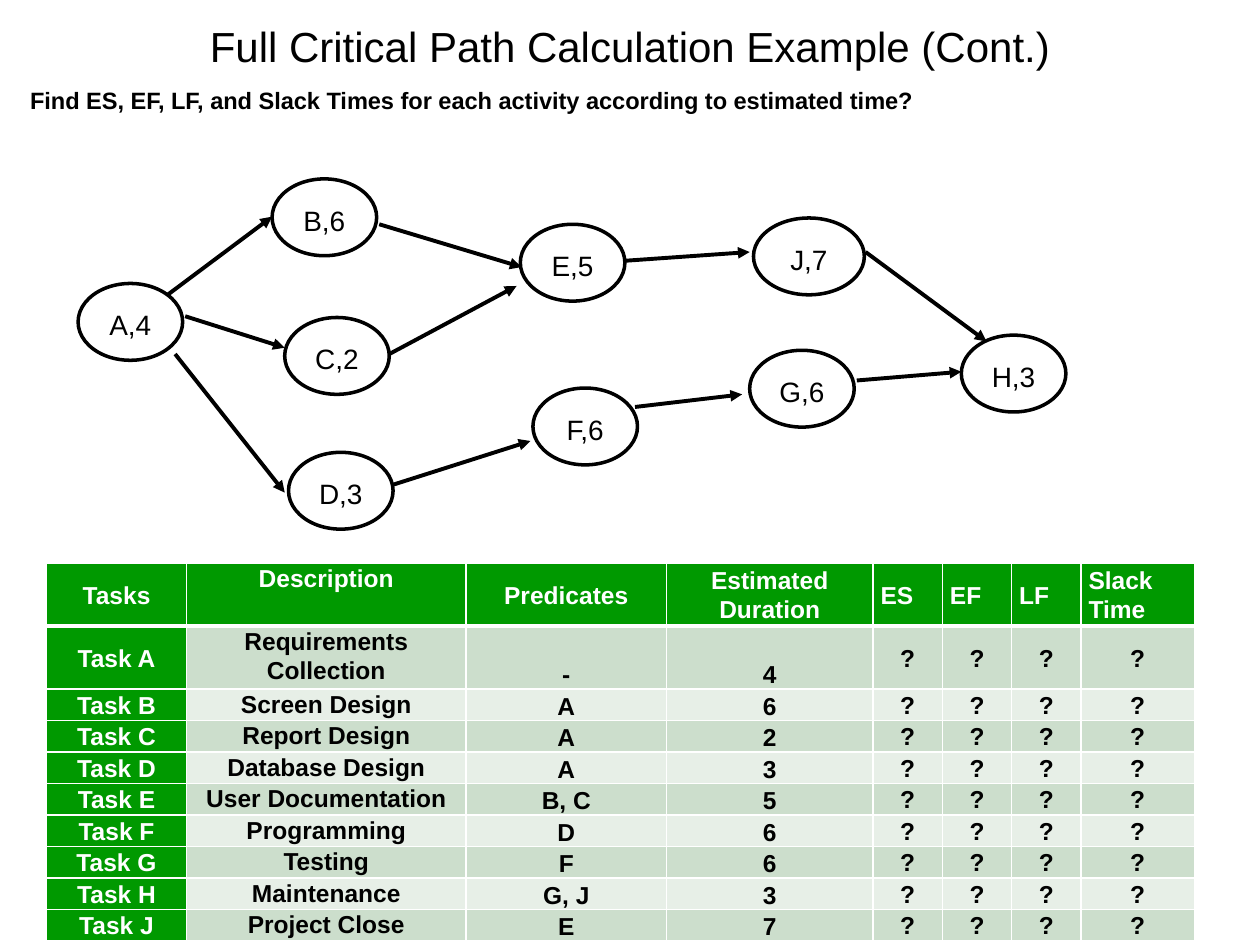
from dataclasses import dataclass

from lxml import etree
from pptx import Presentation
from pptx.dml.color import RGBColor
from pptx.enum.shapes import MSO_CONNECTOR, MSO_SHAPE
from pptx.enum.text import MSO_ANCHOR as ANCHOR, PP_ALIGN as ALIGN
from pptx.oxml.ns import qn
from pptx.util import Inches, Pt

BLACK = RGBColor(0x00, 0x00, 0x00)
WHITE = RGBColor(0xFF, 0xFF, 0xFF)
GREEN = RGBColor(0x00, 0x99, 0x00)
BANDS = (RGBColor(0xCC, 0xDE, 0xCC), RGBColor(0xE7, 0xEF, 0xE7))
FONT = "Arial"


@dataclass
class Node:
    label: str
    left: float
    top: float
    width: float = 0.83
    height: float = 0.61


@dataclass
class Arrow:
    x1: float
    y1: float
    x2: float
    y2: float


@dataclass
class Task:
    name: str
    description: str
    predicates: str
    duration: int


NODES = [
    Node("A,4", 0.62, 2.25), Node("B,6", 2.16, 1.42), Node("C,2", 2.26, 2.52),
    Node("D,3", 2.29, 3.59), Node("E,5", 4.13, 1.78), Node("F,6", 4.23, 3.08),
    Node("G,6", 5.95, 2.78), Node("J,7", 5.98, 1.73, 0.88), Node("H,3", 7.63, 2.66),
]
ARROWS = [
    Arrow(1.33, 2.34, 2.16, 1.72),  # A to B
    Arrow(1.47, 2.51, 2.26, 2.76),  # A to C
    Arrow(1.39, 2.81, 2.26, 3.91),  # A to D
    Arrow(3.01, 1.78, 4.14, 2.12),  # B to E
    Arrow(3.09, 2.81, 4.10, 2.27),  # C to E
    Arrow(3.11, 3.85, 4.21, 3.50),  # D to F
    Arrow(5.04, 3.23, 5.89, 3.13),  # F to G
    Arrow(6.80, 3.02, 7.63, 2.95),  # G to H
    Arrow(4.96, 2.07, 5.95, 2.00),  # E to J
    Arrow(6.87, 2.00, 7.83, 2.71),  # J to H
]
HEADERS = ["Tasks", "Description", "Predicates", "Estimated Duration",
           "ES", "EF", "LF", "Slack\nTime"]
COL_WIDTHS = [1.11, 2.22, 1.59, 1.64, 0.55, 0.55, 0.55, 0.9]
TASKS = [
    Task("Task A", "Requirements Collection", "-", 4),
    Task("Task B", "Screen Design", "A", 6),
    Task("Task C", "Report Design", "A", 2),
    Task("Task D", "Database Design", "A", 3),
    Task("Task E", "User Documentation", "B, C", 5),
    Task("Task F", "Programming", "D", 6),
    Task("Task G", "Testing", "F", 6),
    Task("Task H", "Maintenance", "G, J", 3),
    Task("Task J", "Project Close", "E", 7),
]


def write(tf, text: str, size: float, color=BLACK, bold=False,
          align=ALIGN.LEFT, spacing=1.0, after=0.0) -> None:
    for i, line in enumerate(text.split("\n")):
        p = tf.add_paragraph() if i else tf.paragraphs[0]
        p.alignment = align
        p.line_spacing = spacing
        p.space_after = Pt(after)
        r = p.add_run()
        r.text = line
        r.font.name = FONT
        r.font.size = Pt(size)
        r.font.bold = bold
        r.font.color.rgb = color


def add_text(s, left: float, top: float, width: float, height: float,
             text: str, size: float, anchor=ANCHOR.TOP, **style) -> None:
    tf = s.shapes.add_textbox(Inches(left), Inches(top),
                              Inches(width), Inches(height)).text_frame
    tf.word_wrap = True
    tf.vertical_anchor = anchor
    write(tf, text, size, **style)


def add_node(shapes, node: Node) -> None:
    sp = shapes.add_shape(MSO_SHAPE.FLOWCHART_CONNECTOR, Inches(node.left), Inches(node.top),
                          Inches(node.width), Inches(node.height))
    sp.shadow.inherit = False
    sp.fill.solid()
    sp.fill.fore_color.rgb = WHITE
    sp.line.color.rgb = BLACK
    sp.line.width = Pt(2)
    tf = sp.text_frame
    tf.margin_left = tf.margin_right = Inches(0.07)
    tf.margin_top = tf.margin_bottom = Inches(0.04)
    tf.vertical_anchor = ANCHOR.MIDDLE
    write(tf, node.label, 16, align=ALIGN.CENTER, spacing=1.15, after=7.5)


def add_arrow(shapes, a: Arrow) -> None:
    line = shapes.add_connector(MSO_CONNECTOR.STRAIGHT, Inches(a.x1), Inches(a.y1),
                                Inches(a.x2), Inches(a.y2))
    line.line.color.rgb = BLACK
    line.line.width = Pt(2.25)
    etree.SubElement(line.line._get_or_add_ln(), qn("a:tailEnd"), type="triangle")
    etree.SubElement(line._element.spPr, qn("a:effectLst"))


def set_borders(cell, bottom: float, top: float) -> None:
    tc_pr = cell._tc.get_or_add_tcPr()
    for i, (side, width) in enumerate((("L", 1), ("R", 1), ("T", top), ("B", bottom))):
        ln = etree.Element(qn(f"a:ln{side}"), w=str(Pt(width)))
        fill = etree.SubElement(ln, qn("a:solidFill"))
        etree.SubElement(fill, qn("a:srgbClr"), val=str(WHITE))
        tc_pr.insert(i, ln)


def fill_cell(cell, text: str, row: int, col: int) -> None:
    header = row == 0
    green = header or col == 0
    cell.fill.solid()
    cell.fill.fore_color.rgb = GREEN if green else BANDS[(row - 1) % 2]
    cell.margin_left = cell.margin_right = Inches(0.06)
    cell.margin_top = cell.margin_bottom = 0
    if col == 1:
        cell.vertical_anchor = ANCHOR.TOP
    elif col in (2, 3) and not header:
        cell.vertical_anchor = ANCHOR.BOTTOM
    else:
        cell.vertical_anchor = ANCHOR.MIDDLE
    write(cell.text_frame, text, 14, WHITE if green else BLACK, bold=True, spacing=1.07,
          align=ALIGN.LEFT if header and col >= 4 else ALIGN.CENTER)
    set_borders(cell, bottom=3 if header else 1, top=3 if row == 1 else 1)


def add_task_table(s) -> None:
    rows = [HEADERS] + [[t.name, t.description, t.predicates, str(t.duration)] + ["?"] * 4
                        for t in TASKS]
    table = s.shapes.add_table(len(rows), len(HEADERS), Inches(0.37), Inches(4.47),
                               Inches(sum(COL_WIDTHS)), Inches(3)).table
    for column, width in zip(table.columns, COL_WIDTHS):
        column.width = Inches(width)
    for i, values in enumerate(rows):
        table.rows[i].height = Inches(0.48 if i < 2 else 0.24)
        for j, text in enumerate(values):
            fill_cell(table.cell(i, j), text, i, j)


def main() -> None:
    prs = Presentation()
    prs.slide_width, prs.slide_height = Inches(10), Inches(7.5)
    s = prs.slides.add_slide(prs.slide_layouts[6])

    # Title and question
    add_text(s, 1.25, 0.05, 7.5, 0.62, "Full Critical Path Calculation Example (Cont.)", 24,
             anchor=ANCHOR.MIDDLE, align=ALIGN.CENTER)
    add_text(s, 0.14, 0.63, 9.41, 0.33,
             "Find ES, EF, LF, and Slack Times for each activity according to estimated time?",
             13.5, bold=True)

    # Task table
    add_task_table(s)

    # Activity network
    network = s.shapes.add_group_shape().shapes
    for node in NODES:
        add_node(network, node)
    for arrow in ARROWS:
        add_arrow(network, arrow)

    prs.save("out.pptx")


if __name__ == "__main__":
    main()
